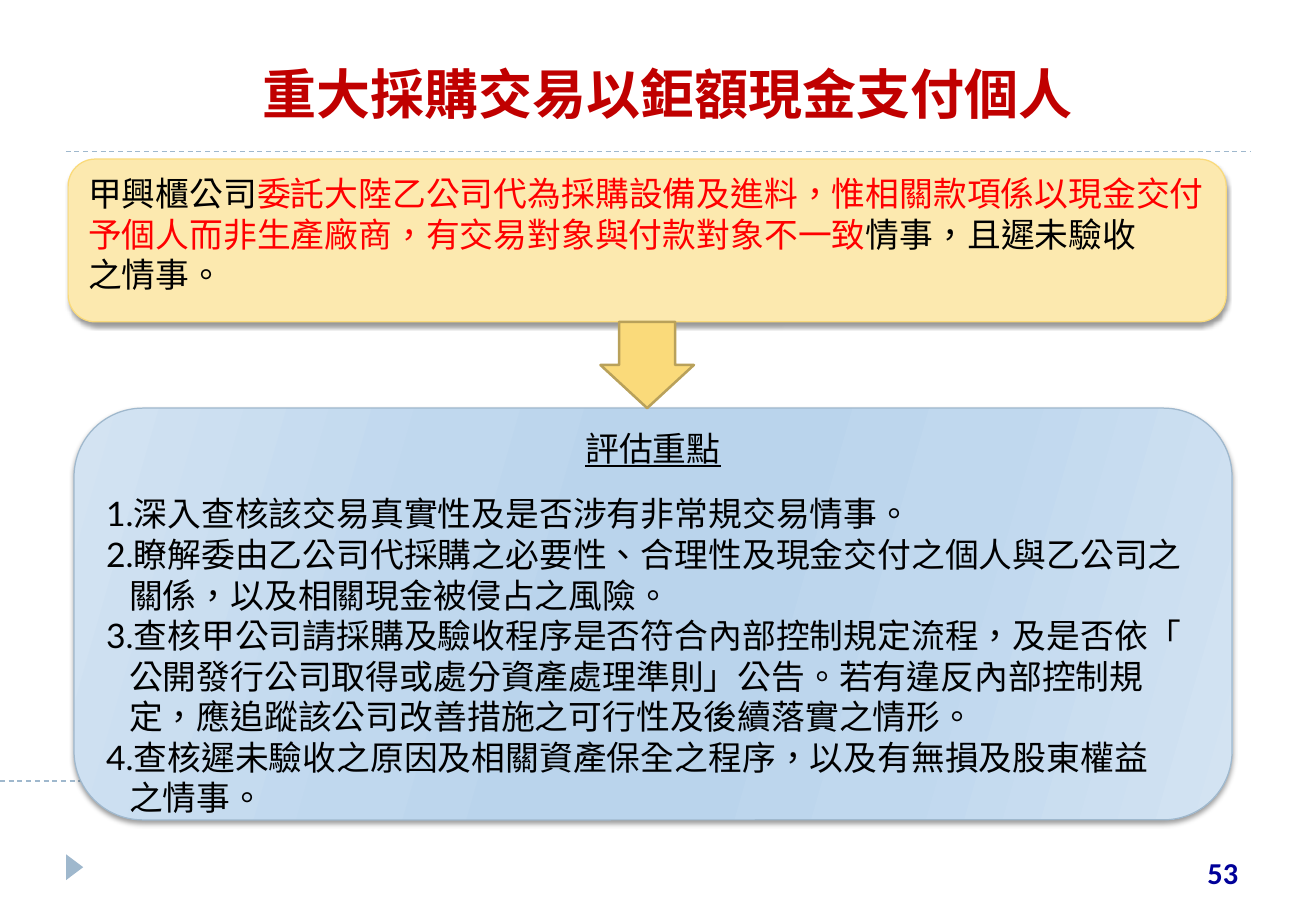
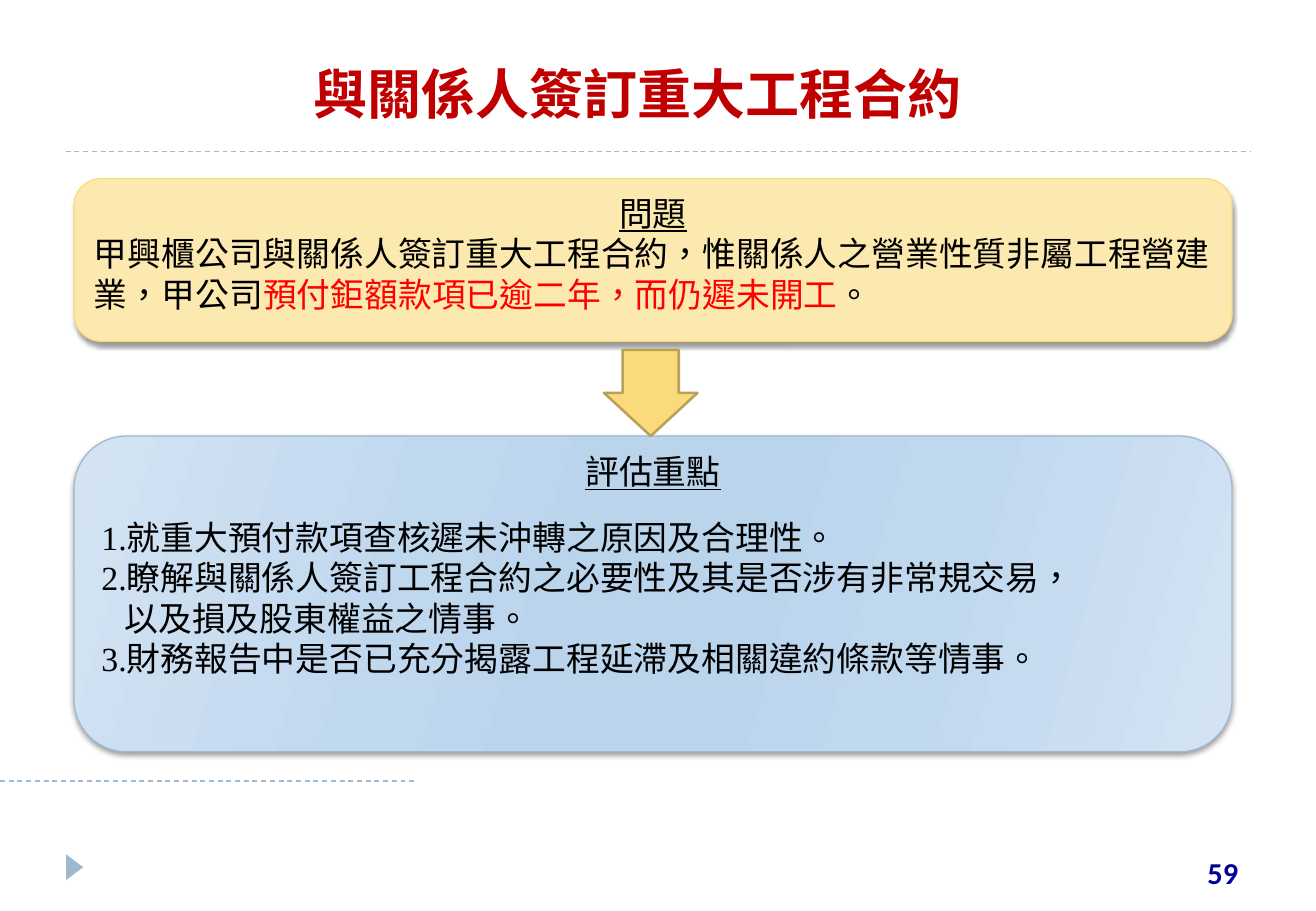
"""Build two audit case slides: a case box, a down arrow and a box of review points."""
from lxml import etree
from pptx import Presentation
from pptx.dml.color import RGBColor
from pptx.enum.dml import MSO_LINE
from pptx.enum.shapes import MSO_CONNECTOR, MSO_SHAPE
from pptx.enum.text import MSO_ANCHOR, PP_ALIGN
from pptx.oxml import parse_xml
from pptx.oxml.ns import nsdecls, qn
from pptx.util import Inches, Pt

DASH = MSO_LINE.DASH
STRAIGHT = MSO_CONNECTOR.STRAIGHT
ROUNDED, ARROW, TRIANGLE = MSO_SHAPE.ROUNDED_RECTANGLE, MSO_SHAPE.DOWN_ARROW, MSO_SHAPE.ISOSCELES_TRIANGLE
TOP, MIDDLE = MSO_ANCHOR.TOP, MSO_ANCHOR.MIDDLE
LEFT, CENTER, RIGHT = PP_ALIGN.LEFT, PP_ALIGN.CENTER, PP_ALIGN.RIGHT

COLORS = {
    "title": "C00000", "number": "000099", "text": "000000", "accent": "FF0000",
    "rule": "9FB8CD", "case": "FCE9AF", "case_line": "FADA7A",
    "arrow": "FADA7A", "arrow_line": "B9A15A", "shadow": "000000",
    "edge": "D3E3F2", "blend": "C0D8EE", "core": "BAD4EC",
}
GRADIENT = [(0, "edge"), (30, "blend"), (45, "core"), (55, "core"), (73, "blend"), (100, "edge")]
CJK = "Noto Sans CJK SC"

presentation = Presentation()
presentation.slide_width, presentation.slide_height = Inches(10.83), Inches(7.5)
COLUMN = presentation.slide_width / 40
ROW = presentation.slide_height / 30
ARROW_SIZE = 2.84
BOX_WIDTH = 35.2

SHADOW = (
    f'<a:effectLst {nsdecls("a")}><a:outerShdw blurRad="{Pt(3)}" dist="{Pt(2)}" dir="5400000" rotWithShape="0">'
    f'<a:srgbClr val="{COLORS["shadow"]}"><a:alpha val="40000"/></a:srgbClr></a:outerShdw></a:effectLst>'
)
STOPS = "".join(
    f'<a:gs pos="{position * 1000}"><a:srgbClr val="{COLORS[name]}"/></a:gs>' for position, name in GRADIENT
)
GRADIENT_FILL = f'<a:gradFill {nsdecls("a")}><a:gsLst>{STOPS}</a:gsLst><a:lin ang="960000" scaled="0"/></a:gradFill>'

CASES = [
    {
        "number": "53", "title": "重大採購交易以鉅額現金支付個人", "title_span": (2.25, 36.12),
        "case_left": 2.07, "case_top": 5.24, "arrow_left": 18.25,
        "points_top": 13.44, "points_rows": 13.56, "points_font": "Lato",
        "heading": None,
        "case": [
            ("甲興櫃公司", "text"),
            ("委託大陸乙公司代為採購設備及進料，惟相關款項係以現金交付\n予個人而非生產廠商，有交易對象與付款對象不一致", "accent"),
            ("情事，且遲未驗收\n之情事。", "text"),
        ],
        "points": [
            "1.深入查核該交易真實性及是否涉有非常規交易情事。",
            "2.瞭解委由乙公司代採購之必要性、合理性及現金交付之個人與乙公司之\n關係，以及相關現金被侵占之風險。",
            "3.查核甲公司請採購及驗收程序是否符合內部控制規定流程，及是否依「\n公開發行公司取得或處分資產處理準則」公告。若有違反內部控制規\n定，應追蹤該公司改善措施之可行性及後續落實之情形。",
            "4.查核遲未驗收之原因及相關資產保全之程序，以及有無損及股東權益\n之情事。",
        ],
    },
    {
        "number": "59", "title": "與關係人簽訂重大工程合約", "title_span": (1.96, 34.83),
        "case_left": 2.25, "case_top": 5.88, "arrow_left": 18.36,
        "points_top": 14.36, "points_rows": 10.4, "points_font": "Times New Roman",
        "heading": "問題",
        "case": [
            ("甲興櫃公司與關係人簽訂重大工程合約，惟關係人之營業性質非屬工程營建\n業，甲公司", "text"),
            ("預付鉅額款項已逾二年，而仍遲未開工", "accent"),
            ("。", "text"),
        ],
        "points": [
            "1.就重大預付款項查核遲未沖轉之原因及合理性。",
            "2.瞭解與關係人簽訂工程合約之必要性及其是否涉有非常規交易，\n以及損及股東權益之情事。",
            "3.財務報告中是否已充分揭露工程延滯及相關違約條款等情事。",
        ],
    },
]


def add_block(slide, kind, left, top, columns, rows, fill=None, line=None, weight=0.75):
    """Place a shape, or a text box when kind is None, on the grid."""
    area = [int(left * COLUMN), int(top * ROW), int(columns * COLUMN), int(rows * ROW)]
    if kind is None:
        shape = slide.shapes.add_textbox(*area)
    else:
        shape = slide.shapes.add_shape(kind, *area)
        shape.shadow.inherit = False
        shape.fill.solid()
        shape.fill.fore_color.rgb = RGBColor.from_string(COLORS[fill])
        if line:
            shape.line.color.rgb = RGBColor.from_string(COLORS[line])
            shape.line.width = Pt(weight)
        else:
            shape.line.fill.background()
    shape.text_frame.word_wrap = True
    shape.text_frame.vertical_anchor = TOP
    return shape


def add_text(shape, runs, font, size=20, align=LEFT, spacing=None, bold=False, underline=False):
    """Write a paragraph of (text, colour) runs, with a line break at each newline."""
    frame = shape.text_frame
    paragraph = frame.paragraphs[0] if not frame.text else frame.add_paragraph()
    paragraph.alignment = align
    if spacing:
        paragraph.line_spacing = Pt(spacing)
    for text, color in runs:
        for index, part in enumerate(text.split("\n")):
            if index:
                paragraph.add_line_break()
            run = paragraph.add_run()
            run.text = part
            run.font.name, run.font.size = font, Pt(size)
            run.font.bold, run.font.underline = bold, underline
            run.font.color.rgb = RGBColor.from_string(COLORS[color])
            properties = run._r.get_or_add_rPr()
            properties.set("lang", "zh-TW")
            etree.SubElement(properties, qn("a:ea")).set("typeface", CJK)
    return paragraph


for case in CASES:
    slide = presentation.slides.add_slide(presentation.slide_layouts[6])

    for start, end, height in [(0, 12.67, 25.72), (2, 38, 5)]:
        y = int(height * ROW)
        rule = slide.shapes.add_connector(STRAIGHT, int(start * COLUMN), y, int(end * COLUMN), y)
        rule.line.color.rgb = RGBColor.from_string(COLORS["rule"])
        rule.line.width = Pt(0.75)
        rule.line.dash_style = DASH
        etree.SubElement(rule._element.spPr, qn("a:effectLst"))

    marker = add_block(slide, TRIANGLE, 1.88, 28.28, 0.78, 0.56, "rule")
    marker.rotation = 90

    title_left, title_columns = case["title_span"]
    title = add_block(slide, None, title_left, 1.16, title_columns, 3.8)
    title.text_frame.vertical_anchor = MIDDLE
    add_text(title, [(case["title"], "title")], "TeX Gyre Bonum", 32, CENTER, bold=True)

    number = add_block(slide, None, 29.32, 27.92, 8.68, 1.6)
    add_text(number, [(case["number"], "number")], "Calibri", 18, RIGHT, bold=True)

    case_box = add_block(slide, ROUNDED, case["case_left"], case["case_top"], BOX_WIDTH, 5.36, "case", "case_line")
    if case["heading"]:
        add_text(case_box, [(case["heading"], "text")], CJK, align=CENTER, spacing=24, underline=True)
    add_text(case_box, case["case"], CJK, spacing=24)

    points_box = add_block(
        slide, ROUNDED, 2.25, case["points_top"], BOX_WIDTH, case["points_rows"], "core", "rule"
    )
    solid_fill = points_box._element.spPr.find(qn("a:solidFill"))
    points_box._element.spPr.replace(solid_fill, parse_xml(GRADIENT_FILL))
    heading = add_text(
        points_box, [("評估重點", "text")], case["points_font"], align=CENTER, spacing=20, underline=True
    )
    heading.space_after = Pt(15)
    for point in case["points"]:
        paragraph = add_text(points_box, [(point, "text")], case["points_font"], spacing=24)
        indent = paragraph._p.get_or_add_pPr()
        indent.set("marL", str(Inches(0.19)))
        indent.set("indent", str(-Inches(0.19)))

    for box in (case_box, points_box):
        properties = box._element.spPr
        properties.replace(properties.find(qn("a:effectLst")), parse_xml(SHADOW))

    arrow_top = case["points_top"] - ARROW_SIZE
    arrow = add_block(
        slide, ARROW, case["arrow_left"], arrow_top, ARROW_SIZE, ARROW_SIZE, "arrow", "arrow_line", 1.5
    )
    arrow.adjustments[0] = 0.6

presentation.save("out.pptx")
